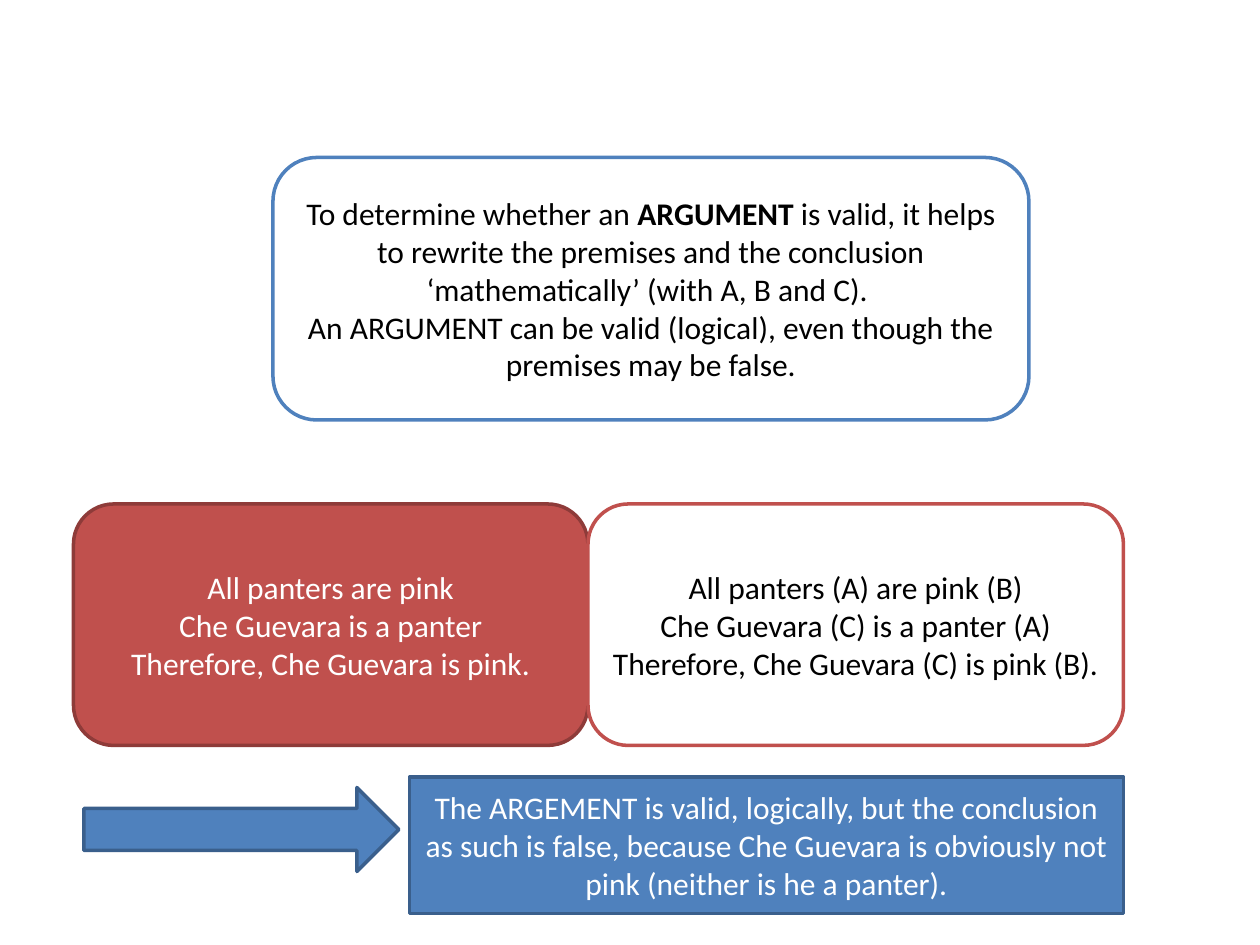
from pptx import Presentation
from pptx.dml.color import RGBColor
from pptx.enum.shapes import MSO_SHAPE as Shape
from pptx.enum.text import MSO_ANCHOR as Anchor, PP_ALIGN as Align
from pptx.util import Pt

PX = 9525  # EMU per px, 96 px to the inch
WHITE, BLACK = "FFFFFF", "000000"
BLUE, DARK_BLUE = "4F81BD", "3A5F8C"
RED, DARK_RED = "C0504D", "8E3B39"


def rgb(value):
    return RGBColor.from_string(value)


def add_box(s, kind, box, fill, line, paragraphs=(), color=WHITE):
    """Add a shape; each paragraph is a list of (text, bold) runs."""
    sp = s.shapes.add_shape(kind, *(v * PX for v in box))
    sp.shadow.inherit = False
    sp.fill.solid()
    sp.fill.fore_color.rgb = rgb(fill)
    sp.line.color.rgb = rgb(line)
    sp.line.width = Pt(2)
    tf = sp.text_frame
    tf.word_wrap = True
    tf.vertical_anchor = Anchor.MIDDLE
    for i, runs in enumerate(paragraphs):
        p = tf.add_paragraph() if i else tf.paragraphs[0]
        p.alignment = Align.CENTER
        for text, bold in runs:
            r = p.add_run()
            r.text = text
            r.font.name = "Calibri"
            r.font.size = Pt(18)
            r.font.bold = bold
            r.font.color.rgb = rgb(color)


def plain(*lines):
    return [[(line, False)] for line in lines]


def add_rule(s, box):
    first = [
        ("To determine whether an ", False),
        ("ARGUMENT", True),
        (" is valid, it helps to rewrite the premises and the conclusion "
         "‘mathematically’ (with A, B and C). ", False),
    ]
    rest = plain("An ARGUMENT can be valid (logical), even though the "
                 "premises may be false.")
    add_box(s, Shape.ROUNDED_RECTANGLE, box, WHITE, BLUE, [first] + rest, BLACK)


def add_example(s, box, split):
    """Argument in words on the left, with letters on the right."""
    x, y, w, h = box
    words = plain("All panters are pink",
                  "Che Guevara is a panter",
                  "Therefore, Che Guevara is pink.")
    letters = plain("All panters (A) are pink (B)",
                    "Che Guevara (C) is a panter (A)",
                    "Therefore, Che Guevara (C) is pink (B).")
    add_box(s, Shape.ROUNDED_RECTANGLE, (x, y, split, h), RED, DARK_RED, words)
    add_box(s, Shape.ROUNDED_RECTANGLE, (x + split, y, w - split, h),
            WHITE, RED, letters, BLACK)


def add_verdict(s, box):
    """Arrow pointing to the verdict on the argument."""
    x, y, w, h = box
    arrow_w, gap = 240, 8
    text_x = arrow_w + gap
    add_box(s, Shape.RIGHT_ARROW, (x, y + gap, arrow_w, 64), BLUE, DARK_BLUE)
    add_box(s, Shape.RECTANGLE, (x + text_x, y, w - text_x, h), BLUE, DARK_BLUE,
            plain("The ARGEMENT is valid, logically, but the conclusion as such "
                  "is false, because Che Guevara is obviously not pink "
                  "(neither is he a panter)."))


def main():
    prs = Presentation()
    prs.slide_width, prs.slide_height = 960 * PX, 720 * PX
    s = prs.slides.add_slide(prs.slide_layouts[6])
    add_rule(s, (208, 120, 576, 200))
    add_example(s, (56, 384, 800, 184), split=392)
    add_verdict(s, (64, 592, 792, 104))
    prs.save("out.pptx")


if __name__ == "__main__":
    main()
